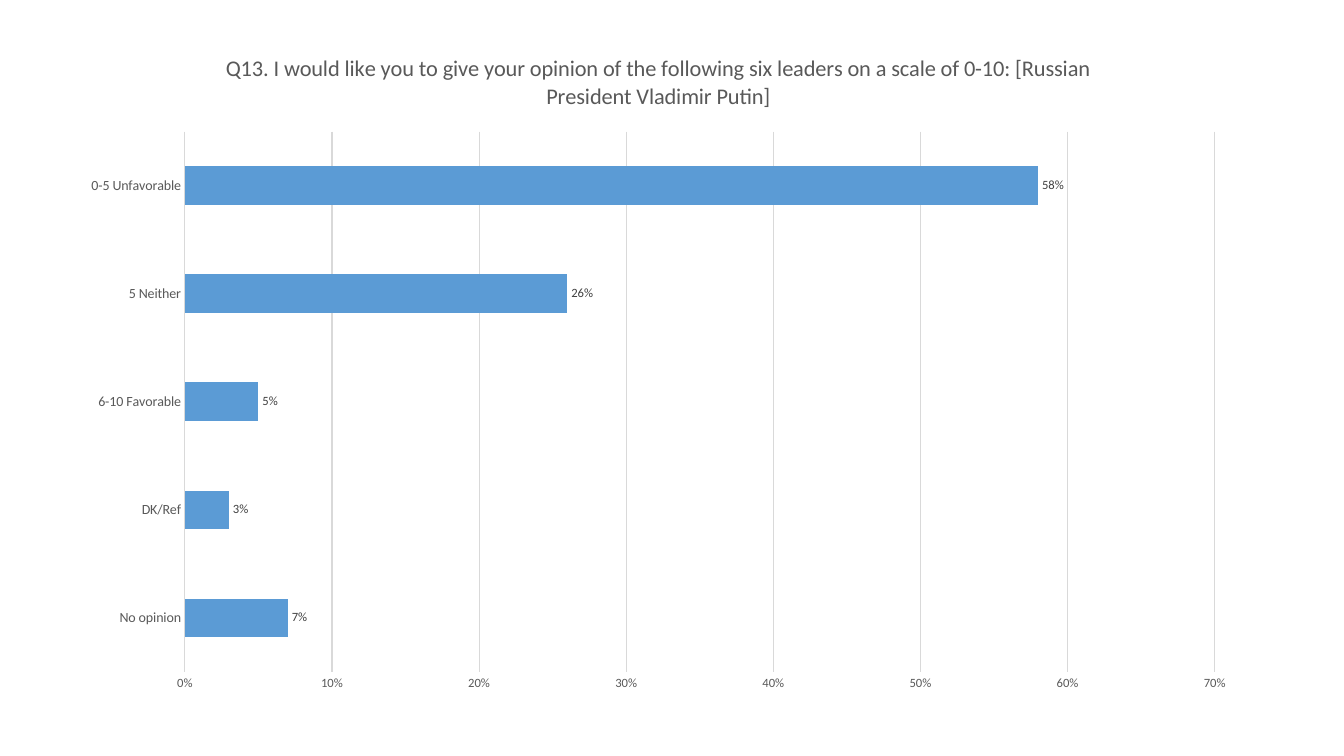
import pptx
import pptx.chart.data
import pptx.dml.color
import pptx.enum.chart
import pptx.oxml
import pptx.oxml.ns
import pptx.util

BLUE = pptx.dml.color.RGBColor(0x5B, 0x9B, 0xD5)
GRID_GREY = pptx.dml.color.RGBColor(0xD9, 0xD9, 0xD9)
TEXT_GREY = pptx.dml.color.RGBColor(0x59, 0x59, 0x59)
LABEL_GREY = pptx.dml.color.RGBColor(0x40, 0x40, 0x40)
BLACK = pptx.dml.color.RGBColor(0x00, 0x00, 0x00)
FONT_NAME = "Calibri"


def style_font(font, size, color):
    font.name = FONT_NAME
    font.size = pptx.util.Pt(size)
    font.bold = False
    font.color.rgb = color


def write_text(frame, text, *, size, color):
    para = frame.paragraphs[0]
    span = para.add_run()
    span.text = text
    style_font(para.font, size, color)
    style_font(span.font, size, color)


deck = pptx.Presentation()
deck.slide_width = pptx.util.Inches(13.33)
deck.slide_height = pptx.util.Inches(7.5)
page = deck.slides.add_slide(deck.slide_layouts[6])

opinions = {
    "No opinion": 0.07,
    "DK/Ref": 0.03,
    "6-10 Favorable": 0.05,
    "5 Neither": 0.26,
    "0-5 Unfavorable": 0.58,
}
chart_data = pptx.chart.data.CategoryChartData(number_format="0%")
chart_data.categories = list(opinions)
chart_data.add_series("Series 1", list(opinions.values()))

chart = page.shapes.add_chart(
    pptx.enum.chart.XL_CHART_TYPE.BAR_CLUSTERED,
    pptx.util.Inches(0.66),
    pptx.util.Inches(0.3),
    pptx.util.Inches(11.74),
    pptx.util.Inches(6.7),
    chart_data,
).chart
chart.has_legend = False
style_font(chart.font, 10, BLACK)
chart.has_title = True
write_text(
    chart.chart_title.text_frame,
    "Q13. I would like you to give your opinion of the following six leaders "
    "on a scale of 0-10: [Russian President Vladimir Putin]",
    size=16,
    color=TEXT_GREY,
)

for axis, size in ((chart.category_axis, 10), (chart.value_axis, 9)):
    axis.major_tick_mark = pptx.enum.chart.XL_TICK_MARK.NONE
    axis.minor_tick_mark = pptx.enum.chart.XL_TICK_MARK.NONE
    style_font(axis.tick_labels.font, size, TEXT_GREY)

chart.value_axis.minimum_scale = 0
chart.value_axis.maximum_scale = 0.7
chart.value_axis.major_unit = 0.1
chart.value_axis.tick_labels.number_format = "0%"
chart.value_axis.tick_labels.number_format_is_linked = False
chart.value_axis.format.line.fill.background()
chart.value_axis.has_major_gridlines = True
for line in (
    chart.category_axis.format.line,
    chart.value_axis.major_gridlines.format.line,
):
    line.color.rgb = GRID_GREY
    line.width = pptx.util.Pt(0.75)

plot = chart.plots[0]
plot.gap_width = 182
plot.vary_by_categories = False
bars = plot.series[0]
bars.format.fill.solid()
bars.format.fill.fore_color.rgb = BLUE
labels = bars.data_labels
labels.show_value = True
labels.number_format = "0%"
labels.number_format_is_linked = False
labels.position = pptx.enum.chart.XL_LABEL_POSITION.OUTSIDE_END
style_font(labels.font, 9, LABEL_GREY)

qn = pptx.oxml.ns.qn
plot_area = chart.element.find(".//" + qn("c:plotArea"))
for layout in plot_area.findall(qn("c:layout")):
    plot_area.remove(layout)
layout = pptx.oxml.parse_xml(
    f'<c:layout {pptx.oxml.ns.nsdecls("c")}><c:manualLayout>'
    '<c:layoutTarget val="inner"/><c:xMode val="edge"/><c:yMode val="edge"/>'
    '<c:x val="0.1"/><c:y val="0.15"/><c:w val="0.87"/><c:h val="0.8"/>'
    "</c:manualLayout></c:layout>"
)
plot_area.insert(0, layout)

deck.save("out.pptx")
